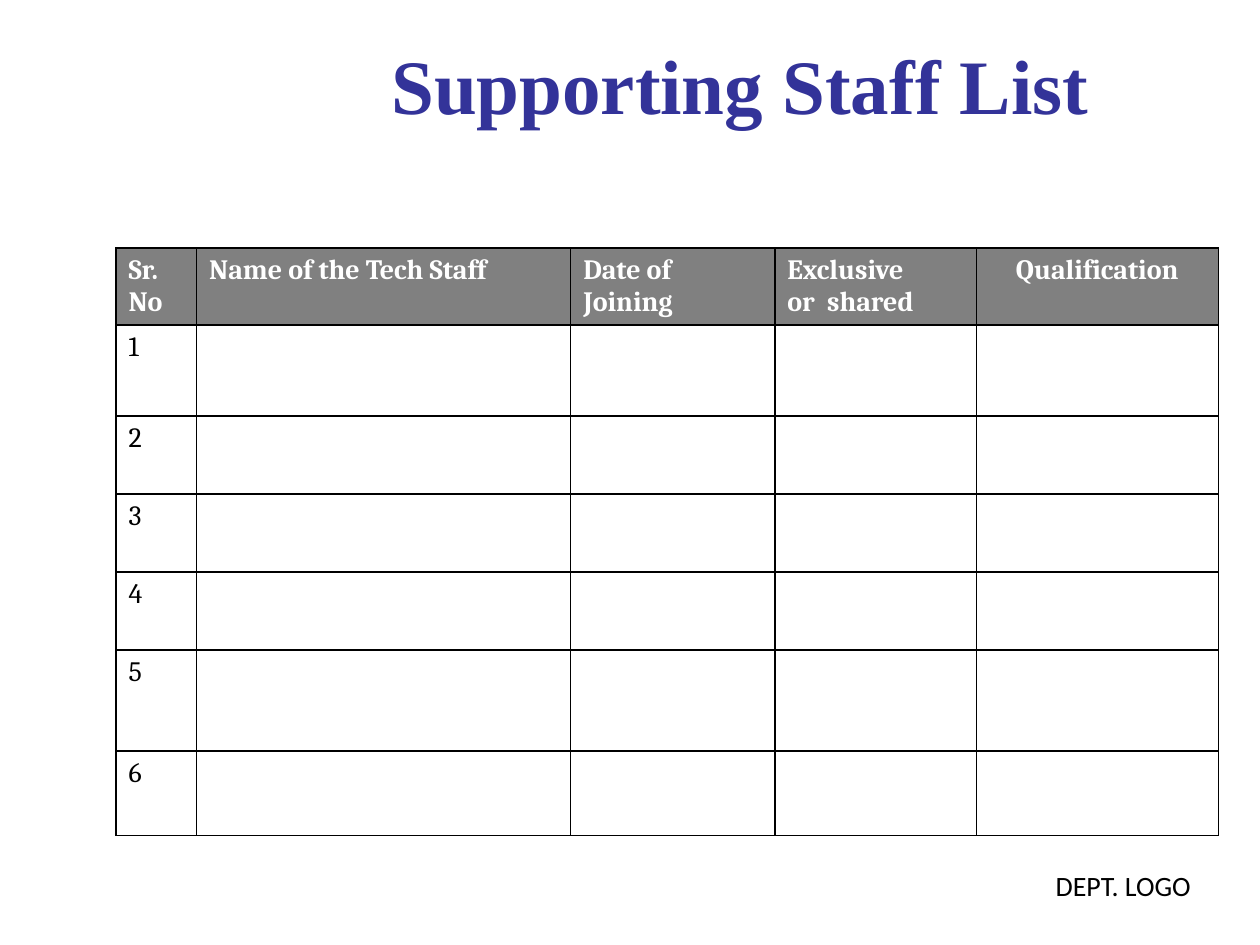
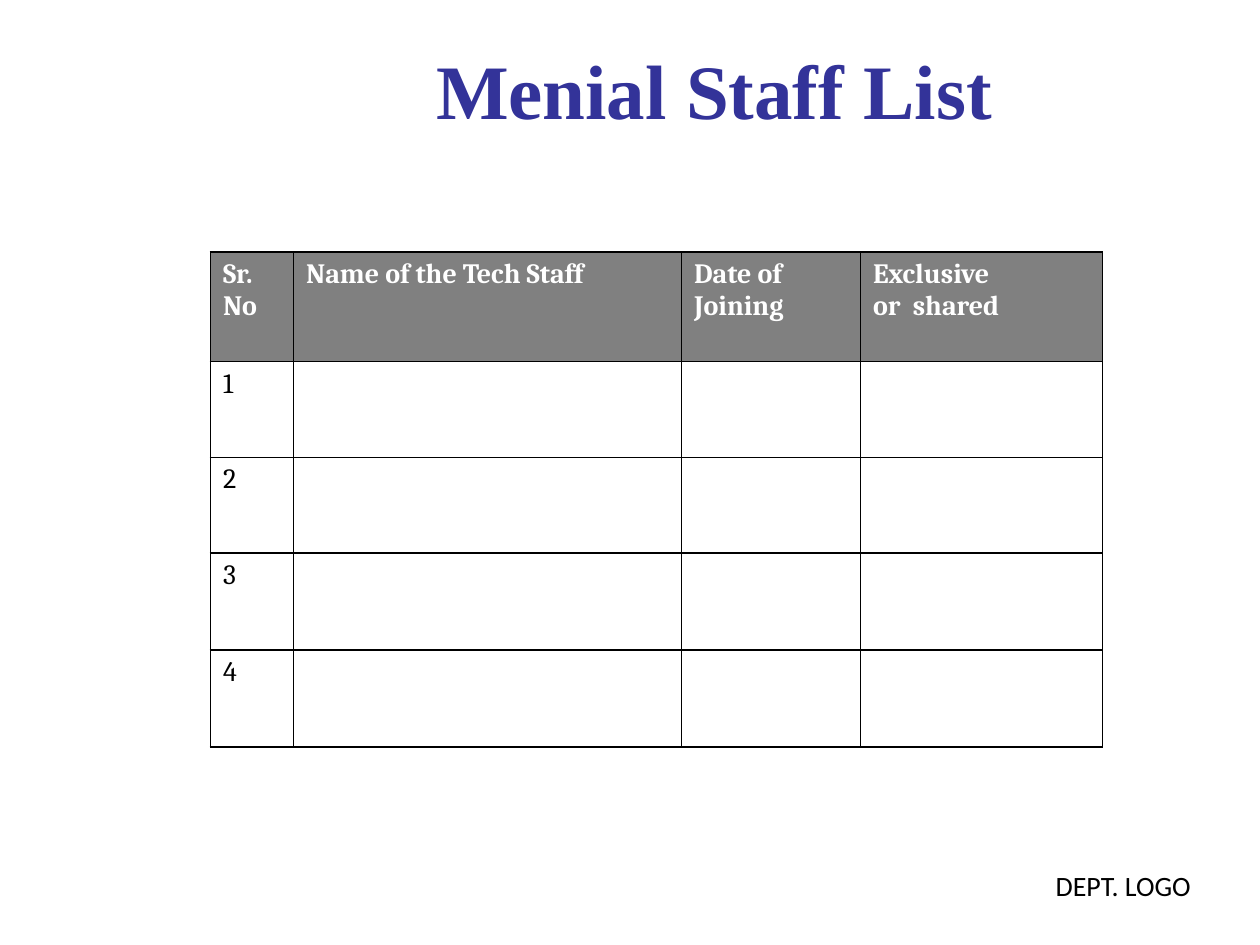
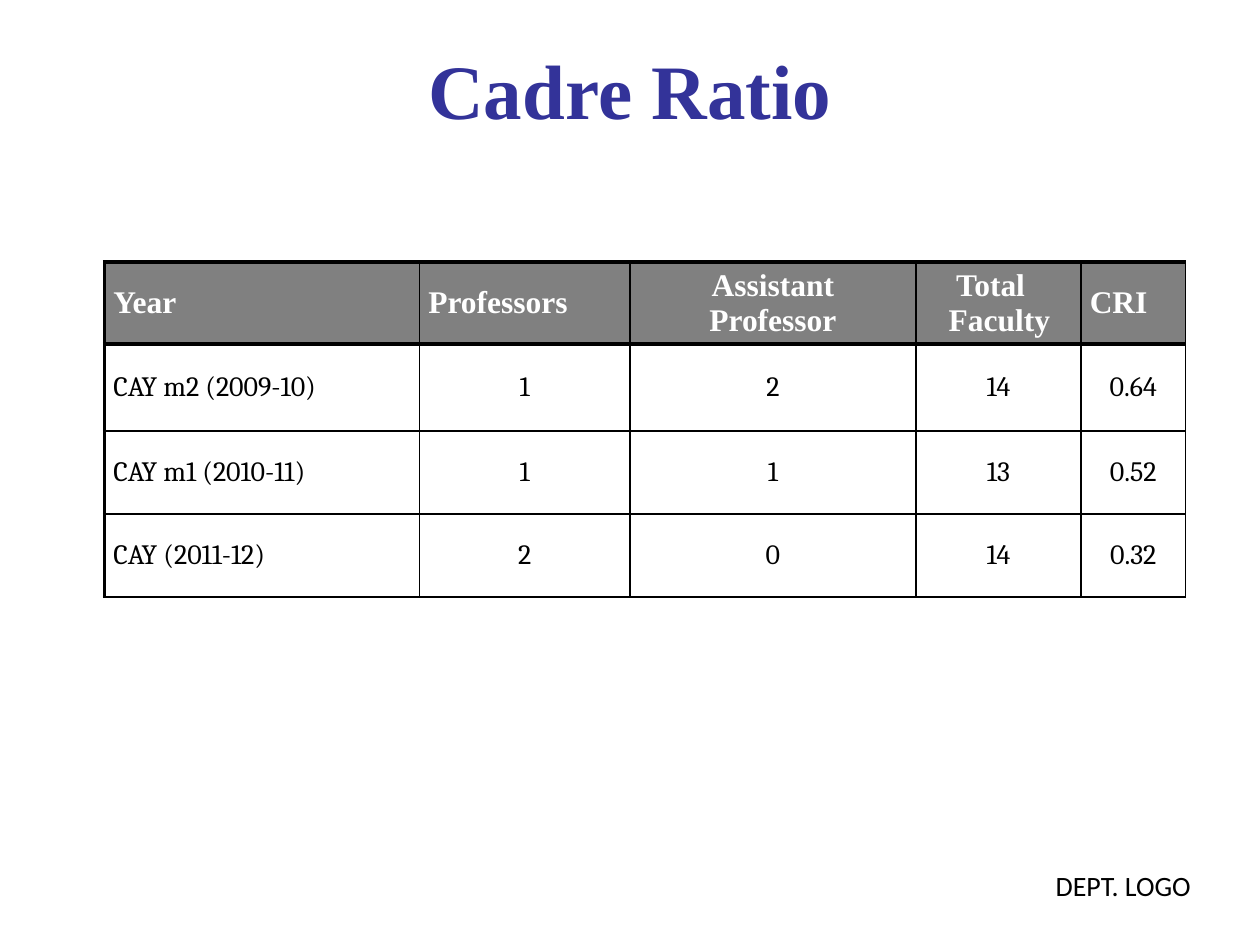
"""Builds the staff list and cadre ratio slides."""
import pptx
import pptx.dml.color
import pptx.enum.shapes
import pptx.enum.text
import pptx.oxml
import pptx.oxml.ns
import pptx.util

Inches = pptx.util.Inches
Pt = pptx.util.Pt
ALIGN = pptx.enum.text.PP_ALIGN
MIDDLE = pptx.enum.text.MSO_ANCHOR.MIDDLE
COLORS = {"title": "333399", "head": "808080", "white": "FFFFFF", "black": "000000"}
SERIF, CELL, SANS = "Times New Roman", "Cambria", "Calibri"


class Deck:
    def __init__(self):
        self.prs = pptx.Presentation()
        self.prs.slide_width = Inches(10)
        self.prs.slide_height = Inches(7.5)
        self.s = None

    def color(self, name):
        return pptx.dml.color.RGBColor.from_string(COLORS[name])

    def fill(self, obj, name):
        obj.fill.solid()
        obj.fill.fore_color.rgb = self.color(name)

    def add_text(self, tf, text, font, size, color, bold=False, align=ALIGN.LEFT):
        for i, line in enumerate(text.split("\n")):
            p = tf.paragraphs[0] if i == 0 else tf.add_paragraph()
            p.alignment = align
            r = p.add_run()
            r.text = line
            r.font.name = font
            r.font.size = Pt(size)
            r.font.bold = bold
            r.font.color.rgb = self.color(color)

    def slide(self, title, left, top, width, height):
        self.s = self.prs.slides.add_slide(self.prs.slide_layouts[5])
        sp = self.s.shapes.title
        sp.left, sp.top = Inches(left), Inches(top)
        sp.width, sp.height = Inches(width), Inches(height)
        tf = sp.text_frame
        tf.auto_size = pptx.enum.text.MSO_AUTO_SIZE.NONE
        tf.vertical_anchor = MIDDLE
        self.add_text(tf, title, SERIF, 44, "title", True, ALIGN.CENTER)
        self.footer("DEPT. LOGO")

    def footer(self, text):
        sp = self.s.shapes.add_shape(pptx.enum.shapes.MSO_SHAPE.RECTANGLE,
                                     Inches(7.83), Inches(6.55), Inches(2.17), Inches(0.95))
        sp.shadow.inherit = False
        sp.line.fill.background()
        self.fill(sp, "white")
        sp.text_frame.vertical_anchor = MIDDLE
        self.add_text(sp.text_frame, text, SANS, 16, "black", align=ALIGN.CENTER)

    def borders(self, cell, widths):
        tcPr = cell._tc.get_or_add_tcPr()
        for side, width in zip("LRTB", widths):
            tcPr.append(pptx.oxml.parse_xml(
                f'<a:ln{side} {pptx.oxml.ns.nsdecls("a")} w="{Pt(width)}"><a:solidFill>'
                f'<a:srgbClr val="{COLORS["black"]}"/></a:solidFill></a:ln{side}>'))

    def table(self, left, top, cols, heights, rows, head_align, body_align,
              head_font=(CELL, 16), outer=1, compact=False):
        frame = self.s.shapes.add_table(len(rows), len(cols), Inches(left), Inches(top),
                                        Inches(sum(cols)), Inches(sum(heights)))
        tbl = frame.table
        tbl.horz_banding = False
        for col, width in zip(tbl.columns, cols):
            col.width = Inches(width)
        for row, height in zip(tbl.rows, heights):
            row.height = Inches(height)
        for i, values in enumerate(rows):
            for j, text in enumerate(values):
                cell = tbl.cell(i, j)
                self.borders(cell, (outer if j == 0 else 1, 1,
                                    outer if i < 2 else 1, outer if i == 0 else 1))
                self.fill(cell, "head" if i == 0 else "white")
                if compact:
                    cell.vertical_anchor = MIDDLE
                    cell.margin_left = cell.margin_right = Inches(0.07)
                    cell.margin_top = cell.margin_bottom = 0
                if text and i == 0:
                    self.add_text(cell.text_frame, text, *head_font, "white", True, head_align[j])
                elif text:
                    self.add_text(cell.text_frame, text, CELL, 16, "black", align=body_align[j])
        return tbl

    def indent(self, cell, margins):
        for p, margin in zip(cell.text_frame.paragraphs, margins):
            p._p.get_or_add_pPr().set("marL", str(Inches(margin)))


def numbered(head, count):
    return [head] + [[str(n)] + [""] * (len(head) - 1) for n in range(1, count + 1)]


def main():
    deck = Deck()
    left, center = ALIGN.LEFT, ALIGN.CENTER
    staff_head = ["Sr.\nNo", "Name of the Tech Staff", "Date of\nJoining", "Exclusive\nor  shared"]

    deck.slide("Supporting Staff List", 1.75, 0, 8.25, 1.33)
    deck.table(0.92, 1.97, [0.64, 2.97, 1.62, 1.6, 1.92],
               [0.61, 0.72, 0.62, 0.62, 0.62, 0.8, 0.67],
               numbered(staff_head + ["Qualification"], 6),
               [left] * 4 + [center], [left] * 5)

    deck.slide("Menial Staff List", 1.67, 0.08, 8, 1.25)
    deck.table(1.67, 2, [0.66, 3.08, 1.42, 1.92], [0.87, 0.76, 0.76, 0.77, 0.77],
               numbered(staff_head, 4), [left] * 4, [left] * 4)

    deck.slide("Cadre Ratio", 0.5, 0.08, 9, 1.25)
    cadre = [["Year", "Professors", "Assistant\nProfessor", "Total\nFaculty", "CRI"],
             ["CAY m2 (2009-10)", "1", "2", "14", "0.64"],
             ["CAY m1 (2010-11)", "1", "1", "13", "0.52"],
             ["CAY (2011-12)", "2", "0", "14", "0.32"]]
    tbl = deck.table(0.83, 2.08, [2.5, 1.67, 2.27, 1.31, 0.83], [0.65, 0.69, 0.66, 0.66],
                     cadre, [left, left, center, left, left], [left] + [center] * 4,
                     head_font=(SERIF, 18), outer=2.25, compact=True)
    deck.indent(tbl.cell(0, 3), [0.25, 0.19])

    deck.prs.save("out.pptx")


if __name__ == "__main__":
    main()
